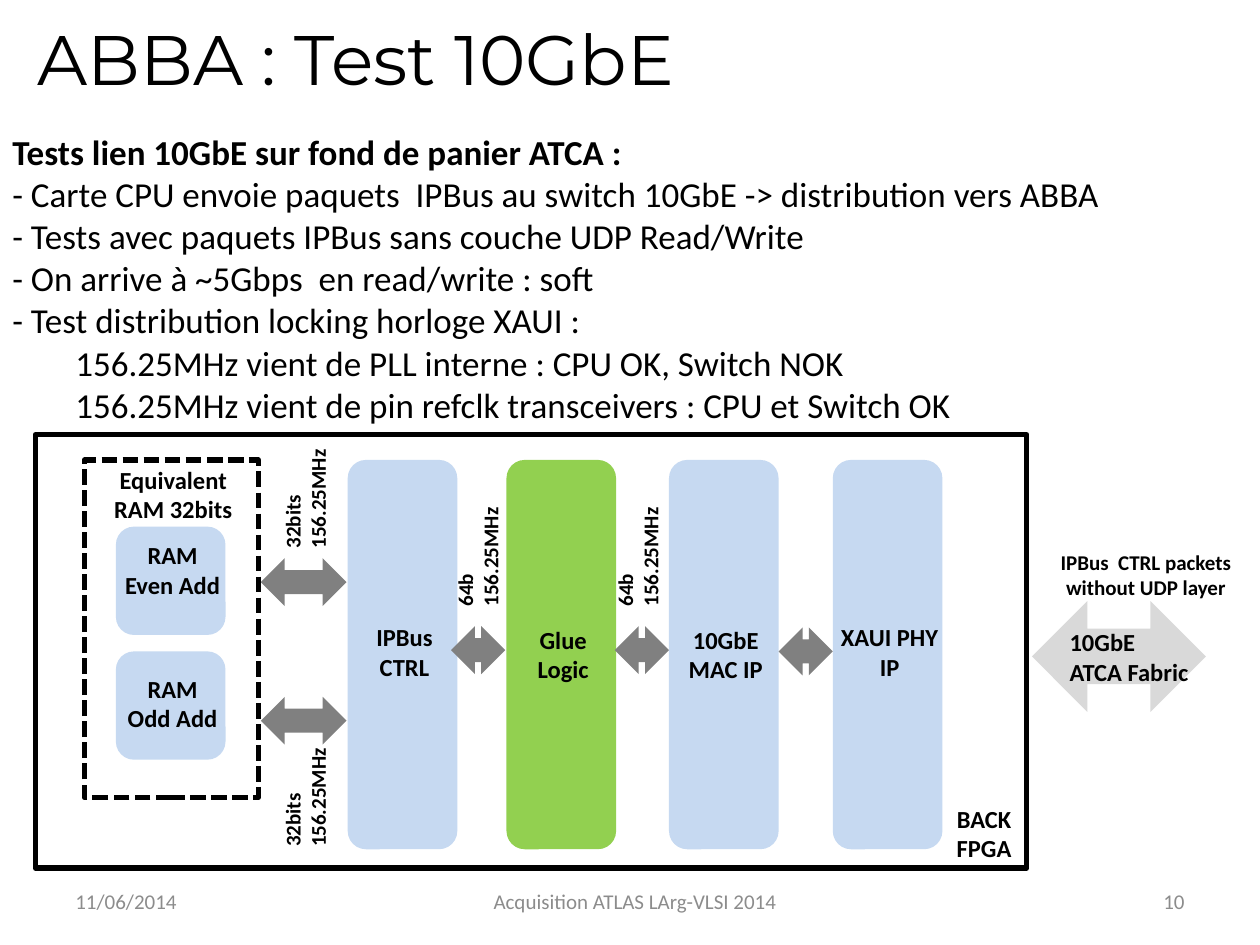
from pptx import Presentation
from pptx.dml.color import RGBColor
from pptx.enum.dml import MSO_LINE
from pptx.enum.shapes import MSO_SHAPE as Shape
from pptx.enum.text import MSO_ANCHOR as Anchor, PP_ALIGN as Align
from pptx.util import Inches, Pt

BLACK = RGBColor(0x00, 0x00, 0x00)
FOOTER_GRAY = RGBColor(0x8C, 0x8C, 0x8C)
ARROW_GRAY = RGBColor(0x80, 0x80, 0x80)
FABRIC_GRAY = RGBColor(0xD9, 0xD9, 0xD9)
BLUE = RGBColor(0xC6, 0xD9, 0xF1)
GREEN = RGBColor(0x92, 0xD0, 0x50)

TITLE = "ABBA : Test 10GbE"
BODY = [
    "Tests lien 10GbE sur fond de panier ATCA :",
    "- Carte CPU envoie paquets  IPBus au switch 10GbE -> distribution vers ABBA",
    "- Tests avec paquets IPBus sans couche UDP Read/Write",
    "- On arrive à ~5Gbps  en read/write : soft",
    "- Test distribution locking horloge XAUI :",
    "\t156.25MHz vient de PLL interne : CPU OK, Switch NOK",
    "\t156.25MHz vient de pin refclk transceivers : CPU et Switch OK",
]
# left, width, text, alignment
FOOTERS = [
    (0.5, 2.33, "11/06/2014", Align.LEFT),
    (3.07, 3.94, "Acquisition ATLAS LArg-VLSI 2014", Align.CENTER),
    (7.17, 2.33, "10", Align.RIGHT),
]
# left, label top, label, fill
STAGES = [
    (2.76, 4.89, "IPBus CTRL", BLUE),
    (4.02, 4.91, "Glue Logic", GREEN),
    (5.31, 4.91, "10GbE MAC IP", BLUE),
    (6.61, 4.89, "XAUI PHY IP", BLUE),
]
# block top, label top, lines
MEMORIES = [
    (4.18, 4.24, ["RAM", "Even Add"]),
    (5.17, 5.3, ["RAM", "Odd Add"]),
]
# left, top, width
BUS_ARROWS = [
    (2.07, 4.43, 0.68), (2.07, 5.53, 0.68),
    (3.58, 4.97, 0.43), (4.88, 4.97, 0.43), (6.18, 4.98, 0.43),
]
# left, top, width, bus size
BUS_LABELS = [
    (1.92, 3.7, 1, "32bits"), (1.92, 6.07, 1, "32bits"),
    (3.13, 4, 1.32, "64b"), (4.4, 4, 1.32, "64b"),
]
# box, lines, size, alignment
CAPTIONS = [
    ((0.79, 3.64, 1.17, 0.57), ["Equivalent RAM 32bits"], 14, Align.CENTER),
    ((7.24, 6.33, 1.14, 0.57), ["BACK", "FPGA"], 14, Align.CENTER),
    ((8.39, 4.93, 1.18, 0.57), ["10GbE", "ATCA Fabric"], 14, Align.LEFT),
    ((8.31, 4.31, 1.57, 0.5), ["IPBus  CTRL packets without UDP layer"], 12, Align.CENTER),
]
BLOCK_WIDTH, LABEL_WIDTH, LABEL_HEIGHT = 0.87, 0.98, 0.57


def set_format(target, values):
    for name, value in values.items():
        setattr(target, name, value)


def set_font(font, size, color=BLACK, name="Calibri", bold=False):
    set_format(font, {"size": Pt(size), "name": name, "bold": bold})
    font.color.rgb = color


def add_text(slide, box, lines, size=14, align=Align.CENTER, color=BLACK,
             bold=True, anchor=Anchor.TOP):
    text_box = slide.shapes.add_textbox(*map(Inches, box))
    frame = text_box.text_frame
    set_format(frame, {"word_wrap": True, "vertical_anchor": anchor})
    for index, line in enumerate(lines):
        paragraph = frame.add_paragraph() if index else frame.paragraphs[0]
        paragraph.alignment = align
        run = paragraph.add_run()
        run.text = line
        set_font(run.font, size, color, bold=bold)
    return text_box


def add_filled(slide, kind, box, color):
    shape = slide.shapes.add_shape(kind, *map(Inches, box))
    shape.shadow.inherit = False
    shape.fill.solid()
    shape.fill.fore_color.rgb = color
    shape.line.fill.background()


def add_outline(slide, box, dash=None):
    shape = slide.shapes.add_shape(Shape.RECTANGLE, *map(Inches, box))
    shape.shadow.inherit = False
    shape.fill.background()
    shape.line.color.rgb = BLACK
    set_format(shape.line, {"width": Pt(3), "dash_style": dash})


def add_block(slide, left, top, height, color, label_top, lines):
    add_filled(slide, Shape.ROUNDED_RECTANGLE, (left, top, BLOCK_WIDTH, height), color)
    add_text(slide, (left - 0.04, label_top, LABEL_WIDTH, LABEL_HEIGHT), lines)


def add_title(slide):
    title = slide.shapes.title
    set_format(title, {"left": Inches(0.2), "top": Inches(0.14),
                       "width": Inches(9.57), "height": Inches(0.63)})
    title.text_frame.text = TITLE
    title.text_frame.vertical_anchor = Anchor.MIDDLE
    paragraph = title.text_frame.paragraphs[0]
    paragraph.alignment = Align.LEFT
    set_font(paragraph.runs[0].font, 40, name="Montserrat")


def add_diagram(slide):
    add_outline(slide, (0.28, 3.45, 7.87, 3.44))
    add_outline(slide, (0.67, 3.65, 1.38, 2.68), MSO_LINE.SQUARE_DOT)
    for left, label_top, label, color in STAGES:
        add_block(slide, left, 3.65, 3.09, color, label_top, [label])
    for top, label_top, lines in MEMORIES:
        add_block(slide, 0.92, top, 0.86, BLUE, label_top, lines)
    for left, top, width in BUS_ARROWS:
        add_filled(slide, Shape.LEFT_RIGHT_ARROW, (left, top, width, 0.38), ARROW_GRAY)
    add_filled(slide, Shape.LEFT_RIGHT_ARROW, (8.19, 4.77, 1.38, 0.88), FABRIC_GRAY)
    for left, top, width, bus_size in BUS_LABELS:
        label = add_text(slide, (left, top, width, 0.5),
                         [bus_size, "156.25MHz"], 12, Align.LEFT)
        label.rotation = 270
    for box, lines, size, align in CAPTIONS:
        add_text(slide, box, lines, size, align)


def main():
    presentation = Presentation()
    set_format(presentation, {"slide_width": Inches(10), "slide_height": Inches(7.5)})
    slide = presentation.slides.add_slide(presentation.slide_layouts[5])
    add_title(slide)
    for left, width, text, align in FOOTERS:
        add_text(slide, (left, 6.95, width, 0.4), [text], 12, align,
                 FOOTER_GRAY, bold=False, anchor=Anchor.MIDDLE)
    add_diagram(slide)
    body = add_text(slide, (0, 0.99, 10, 2.46), BODY, 20, Align.LEFT, bold=False)
    body.text_frame.paragraphs[0].runs[0].font.bold = True
    presentation.save("out.pptx")


if __name__ == "__main__":
    main()
